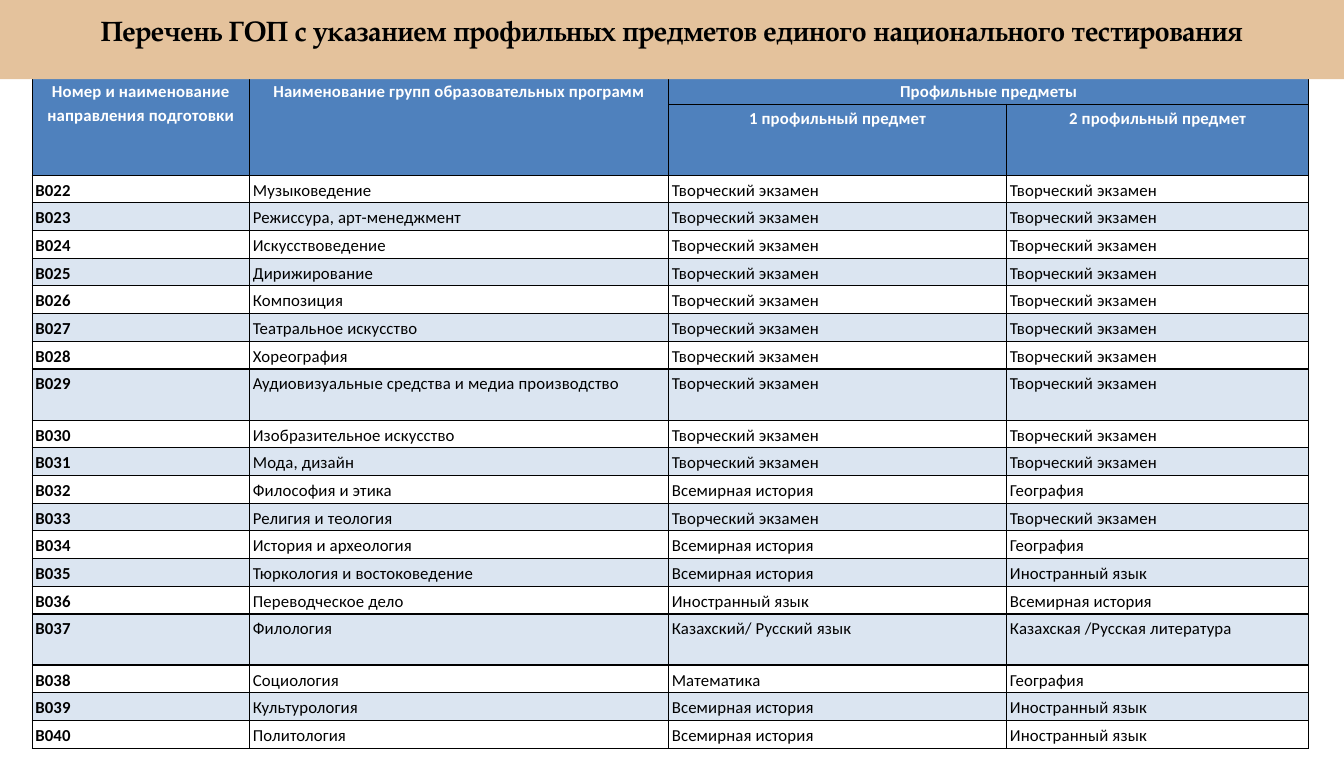
from lxml import etree
from pptx import Presentation
from pptx.dml.color import RGBColor
from pptx.enum.shapes import MSO_SHAPE as SHAPE
from pptx.enum.text import MSO_ANCHOR as ANCHOR, PP_ALIGN as ALIGN
from pptx.oxml.ns import qn
from pptx.util import Cm, Pt

BLACK = RGBColor(0x00, 0x00, 0x00)
WHITE = RGBColor(0xFF, 0xFF, 0xFF)
BLUE = RGBColor(0x4F, 0x81, 0xBD)
SAND = RGBColor(0xE4, 0xC2, 0x9C)

ART = "Творческий экзамен"
HISTORY = "Всемирная история"
GEOGRAPHY = "География"
LANGUAGE = "Иностранный язык"

HEADER = [
    ("Номер и наименование направления подготовки",
     "Наименование групп образовательных программ", "Профильные предметы", ""),
    ("", "", "1 профильный предмет", "2 профильный предмет"),
]
FIRST_CODE = 22
PROGRAMS = [
    ("Музыковедение", ART, ART),
    ("Режиссура, арт-менеджмент", ART, ART),
    ("Искусствоведение", ART, ART),
    ("Дирижирование", ART, ART),
    ("Композиция", ART, ART),
    ("Театральное искусство", ART, ART),
    ("Хореография", ART, ART),
    ("Аудиовизуальные средства и медиа производство", ART, ART),
    ("Изобразительное искусство", ART, ART),
    ("Мода, дизайн", ART, ART),
    ("Философия и этика", HISTORY, GEOGRAPHY),
    ("Религия и теология", ART, ART),
    ("История и археология", HISTORY, GEOGRAPHY),
    ("Тюркология и востоковедение", HISTORY, LANGUAGE),
    ("Переводческое дело", LANGUAGE, HISTORY),
    ("Филология", "Казахский/ Русский язык", "Казахская /Русская литература"),
    ("Социология", "Математика", GEOGRAPHY),
    ("Культурология", HISTORY, LANGUAGE),
    ("Политология", HISTORY, LANGUAGE),
]
TALL_PROGRAMS = ("Аудиовизуальные средства и медиа производство", "Филология")
COL_WIDTHS = [5.49, 10.57, 8.53, 7.62]
HEADER_HEIGHTS = [0.67, 1.79]
NO_STYLE = "{2D5ABB26-0587-4C30-8999-92F81FD0307C}"


def add_text(p, text, **font):
    r = p.add_run()
    r.text = text
    color = font.pop("color")
    for name, value in font.items():
        setattr(r.font, name, value)
    r.font.color.rgb = color
    return r


def add_borders(cell):
    tcPr = cell._tc.get_or_add_tcPr()
    for i, side in enumerate(("a:lnL", "a:lnR", "a:lnT", "a:lnB")):
        ln = etree.Element(qn(side), w=str(Pt(1)))
        fill = etree.SubElement(ln, qn("a:solidFill"))
        etree.SubElement(fill, qn("a:srgbClr"), val=str(BLACK))
        tcPr.insert(i, ln)


prs = Presentation()
prs.slide_width, prs.slide_height = Cm(33.91), Cm(19.51)
s = prs.slides.add_slide(prs.slide_layouts[6])

# Table grid
rows = HEADER + [(f"В{code:03}", *program)
                 for code, program in enumerate(PROGRAMS, FIRST_CODE)]
heights = HEADER_HEIGHTS + [1.29 if program[0] in TALL_PROGRAMS else 0.7
                            for program in PROGRAMS]
frame = s.shapes.add_table(len(rows), len(COL_WIDTHS), Cm(0.81), Cm(1.96),
                           Cm(sum(COL_WIDTHS)), Cm(sum(heights)))
table = frame.table
table.first_row = table.horz_banding = False
table._tbl.tblPr.find(qn("a:tableStyleId")).text = NO_STYLE
for col, width in zip(table.columns, COL_WIDTHS):
    col.width = Cm(width)
for row, height in zip(table.rows, heights):
    row.height = Cm(height)

# Merged header cells
table.cell(0, 0).merge(table.cell(1, 0))
table.cell(0, 1).merge(table.cell(1, 1))
table.cell(0, 2).merge(table.cell(0, 3))

# Cell text, fills and borders
for i, texts in enumerate(rows):
    is_header = i < len(HEADER)
    for j, text in enumerate(texts):
        cell = table.cell(i, j)
        cell.margin_left = cell.margin_right = Cm(0.05 if is_header else 0.08)
        cell.margin_top = cell.margin_bottom = Cm(0.03 if is_header else 0.05)
        if is_header or i % 2:
            cell.fill.solid()
            cell.fill.fore_color.rgb = BLUE
            if not is_header:
                rgb = cell._tc.tcPr.find(".//" + qn("a:srgbClr"))
                etree.SubElement(rgb, qn("a:alpha"), val="20000")
        else:
            cell.fill.background()
        add_borders(cell)
        if text:
            p = cell.text_frame.paragraphs[0]
            p.line_spacing = 1.15
            p.alignment = ALIGN.CENTER if is_header else ALIGN.LEFT
            r = add_text(p, text, name="Calibri", size=Pt(12),
                         bold=is_header or j == 0,
                         color=WHITE if is_header else BLACK)
            r.font._element.set("spc", "10")

# Title band
band = s.shapes.add_shape(SHAPE.RECTANGLE, 0, 0, prs.slide_width, Cm(2))
band.shadow.inherit = False
band.fill.solid()
band.fill.fore_color.rgb = SAND
band.line.fill.background()
tf = band.text_frame
for name, value in {"word_wrap": True, "vertical_anchor": ANCHOR.MIDDLE,
                    "margin_top": Cm(0.13), "margin_bottom": Cm(0.6)}.items():
    setattr(tf, name, value)
p = tf.paragraphs[0]
p.alignment = ALIGN.CENTER
add_text(p, "Перечень ГОП с указанием профильных предметов единого национального тестирования",
         name="TeX Gyre Pagella", size=Pt(20), bold=True, color=BLACK)

prs.save("out.pptx")
